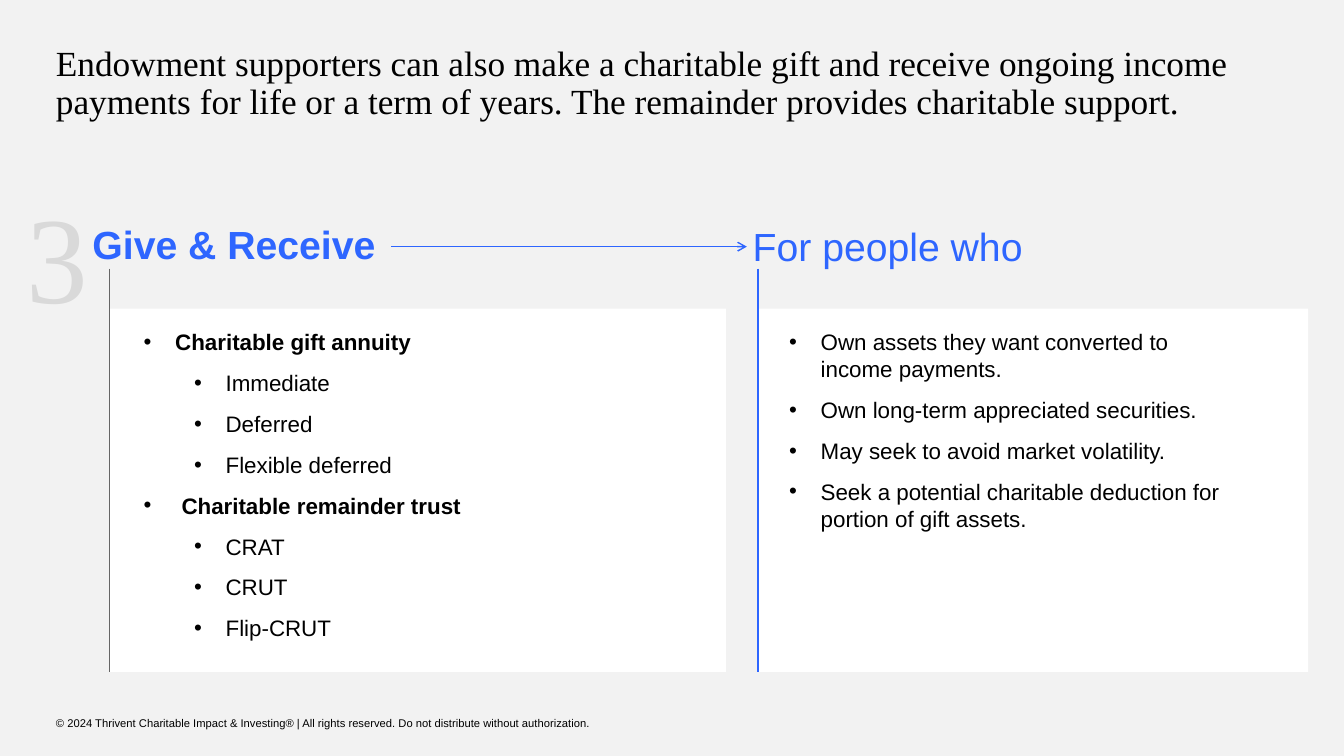
from dataclasses import dataclass

from pptx import Presentation
from pptx.dml.color import RGBColor
from pptx.enum.shapes import MSO_CONNECTOR as Connector, MSO_SHAPE as Shape
from pptx.enum.text import MSO_ANCHOR as Anchor
from pptx.oxml.ns import qn
from pptx.util import Pt
from lxml.etree import SubElement


@dataclass(frozen=True)
class Theme:
    background: str = "F2F2F2"
    panel: str = "FFFFFF"
    ink: str = "000000"
    accent: str = "2E66FF"
    rule: str = "666666"
    numeral: str = "D9D9D9"
    serif: str = "Times New Roman"
    sans: str = "Arial"
    title: float = 25.2
    heading: float = 28
    body: float = 16
    footer: float = 8
    number: float = 88


def write_text(para, text, *, font, size, color, bold=False, line=None, after=0, indent=None, hang=22.5):
    properties = para._p.get_or_add_pPr()
    if indent is not None:
        properties.set("marL", str(Pt(indent)))
        properties.set("indent", str(-Pt(hang)))
        SubElement(properties, qn("a:buFont")).set("typeface", "Arial")
        SubElement(properties, qn("a:buChar")).set("char", "•")
    para.space_after = Pt(after)
    if line:
        para.line_spacing = line
    span = para.add_run()
    span.text = text
    span.font.name = font
    span.font.size = Pt(size)
    span.font.bold = bold
    span.font.color.rgb = RGBColor.from_string(color)


class Page:
    def __init__(self, deck, theme):
        self.theme = theme
        self.slide = deck.slides.add_slide(deck.slide_layouts[6])
        fill = self.slide.background.fill
        fill.solid()
        fill.fore_color.rgb = RGBColor.from_string(theme.background)

    def panel(self, left, top, width, height):
        box = self.slide.shapes.add_shape(Shape.RECTANGLE, Pt(left), Pt(top), Pt(width), Pt(height))
        box.shadow.inherit = False
        box.fill.solid()
        box.fill.fore_color.rgb = RGBColor.from_string(self.theme.panel)
        box.line.fill.background()

    def frame(self, left, top, width, height, inset=True, anchor=Anchor.TOP):
        box = self.slide.shapes.add_textbox(Pt(left), Pt(top), Pt(width), Pt(height))
        frame = box.text_frame
        frame.word_wrap = True
        frame.vertical_anchor = anchor
        if not inset:
            frame.margin_left = frame.margin_right = frame.margin_top = frame.margin_bottom = 0
        return frame

    def label(self, place, text, inset=True, anchor=Anchor.TOP, **style):
        write_text(self.frame(*place, inset, anchor).paragraphs[0], text, **style)

    def bullets(self, place, items):
        frame = self.frame(*place)
        for index, (text, level, style) in enumerate(items):
            para = frame.paragraphs[0] if index == 0 else frame.add_paragraph()
            para.level = level
            style = {"indent": 22.5 + 36 * level, **style}
            write_text(para, text, font=self.theme.sans, size=self.theme.body,
                       color=self.theme.ink, after=10, **style)

    def line(self, start, end, color, width=1, arrow=False):
        line = self.slide.shapes.add_connector(Connector.STRAIGHT, *map(Pt, start + end))
        line.line.color.rgb = RGBColor.from_string(color)
        line.line.width = Pt(width)
        if arrow:
            SubElement(line.line._get_or_add_ln(), qn("a:tailEnd")).set("type", "arrow")
        SubElement(line._element.spPr, qn("a:effectLst"))


def main():
    deck = Presentation()
    deck.slide_width, deck.slide_height = Pt(960), Pt(540)
    theme = Theme()
    page = Page(deck, theme)

    page.label((40, 33, 880, 67),
               "Endowment supporters can also make a charitable gift and receive ongoing income "
               "payments for life or a term of years. The remainder provides charitable support.",
               inset=False, font=theme.serif, size=theme.title, color=theme.ink, line=0.9)
    page.label((40, 510.5, 440, 11.5),
               "© 2024 Thrivent Charitable Impact & Investing® | All rights reserved. "
               "Do not distribute without authorization.",
               inset=False, anchor=Anchor.MIDDLE, font=theme.sans, size=theme.footer, color=theme.ink)
    page.label((19, 128.8, 48, 102), "3", inset=False,
               font=theme.serif, size=theme.number, color=theme.numeral)

    panel_top, panel_height, rule_top = 220.5, 259.5, 191.8
    columns = [(78.5, 440, theme.rule, 0.75), (541.5, 393, theme.accent, 1)]
    for left, width, color, weight in columns:
        page.panel(left, panel_top, width, panel_height)
        page.line((left, rule_top), (left, panel_top + panel_height), color, weight)

    page.line((279.4, 176.2), (533.5, 176.2), theme.accent, arrow=True)
    heading = {"font": theme.sans, "size": theme.heading, "color": theme.accent}
    page.label((59, 157.7, 232.5, 29), "Give & Receive", bold=True, line=0.9, **heading)
    page.label((530.6, 155.5, 318, 41), "For people who", after=6, **heading)

    gifts = [
        ("Charitable gift annuity", ["Immediate", "Deferred", "Flexible deferred"], {}),
        ("Charitable remainder trust", ["CRAT", "CRUT", "Flip-CRUT"], {"indent": 27, "hang": 27}),
    ]
    gift_items = []
    for name, kinds, style in gifts:
        gift_items.append((name, 0, {"bold": True, **style}))
        gift_items += [(kind, 1, {}) for kind in kinds]
    page.bullets((95.6, 231, 410, 233), gift_items)

    reasons = [
        "Own assets they want converted to income payments.",
        "Own long-term appreciated securities.",
        "May seek to avoid market volatility.",
        "Seek a potential charitable deduction for portion of gift assets.",
    ]
    page.bullets((556.6, 231, 339, 154), [(reason, 0, {}) for reason in reasons])

    deck.save("out.pptx")


if __name__ == "__main__":
    main()
